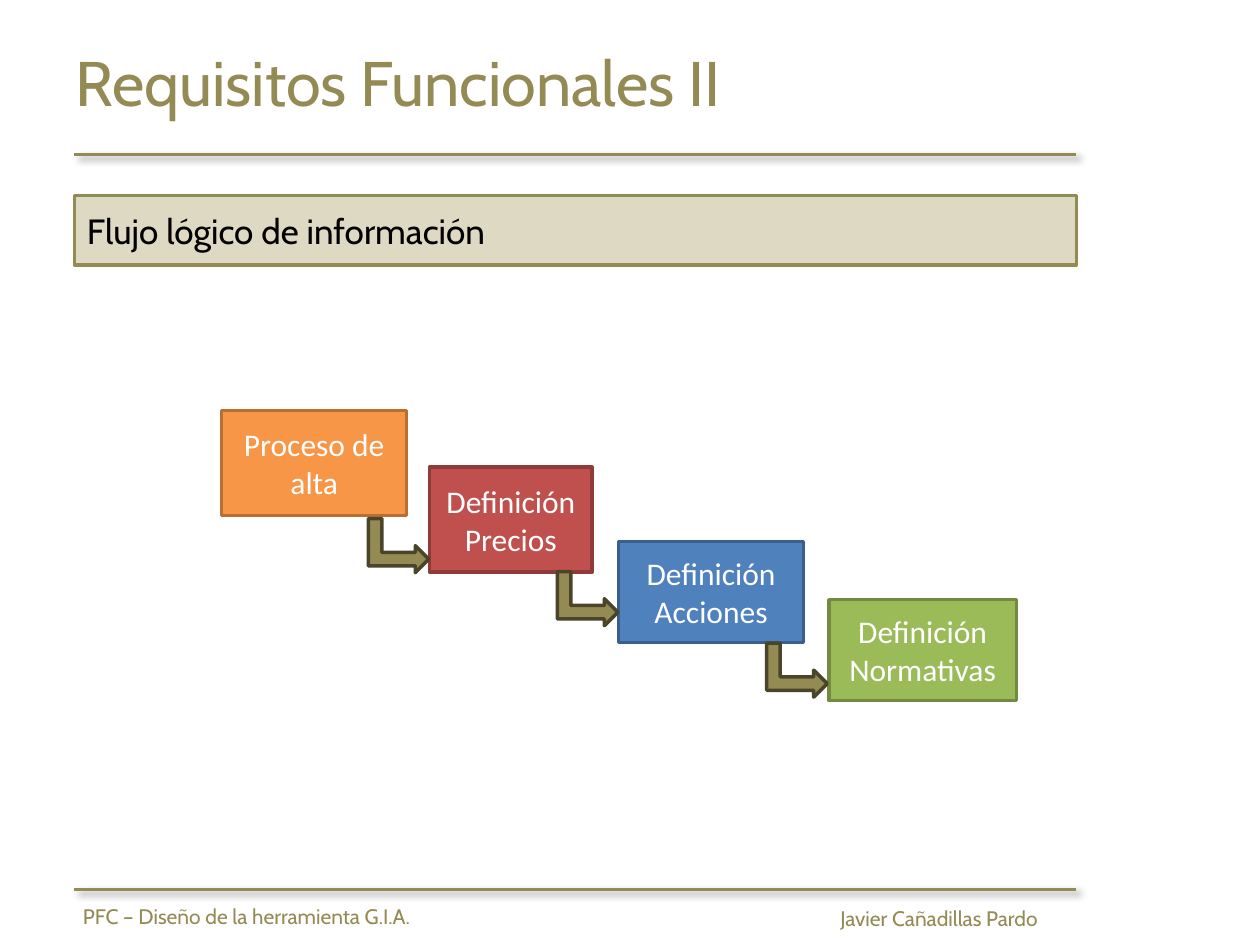
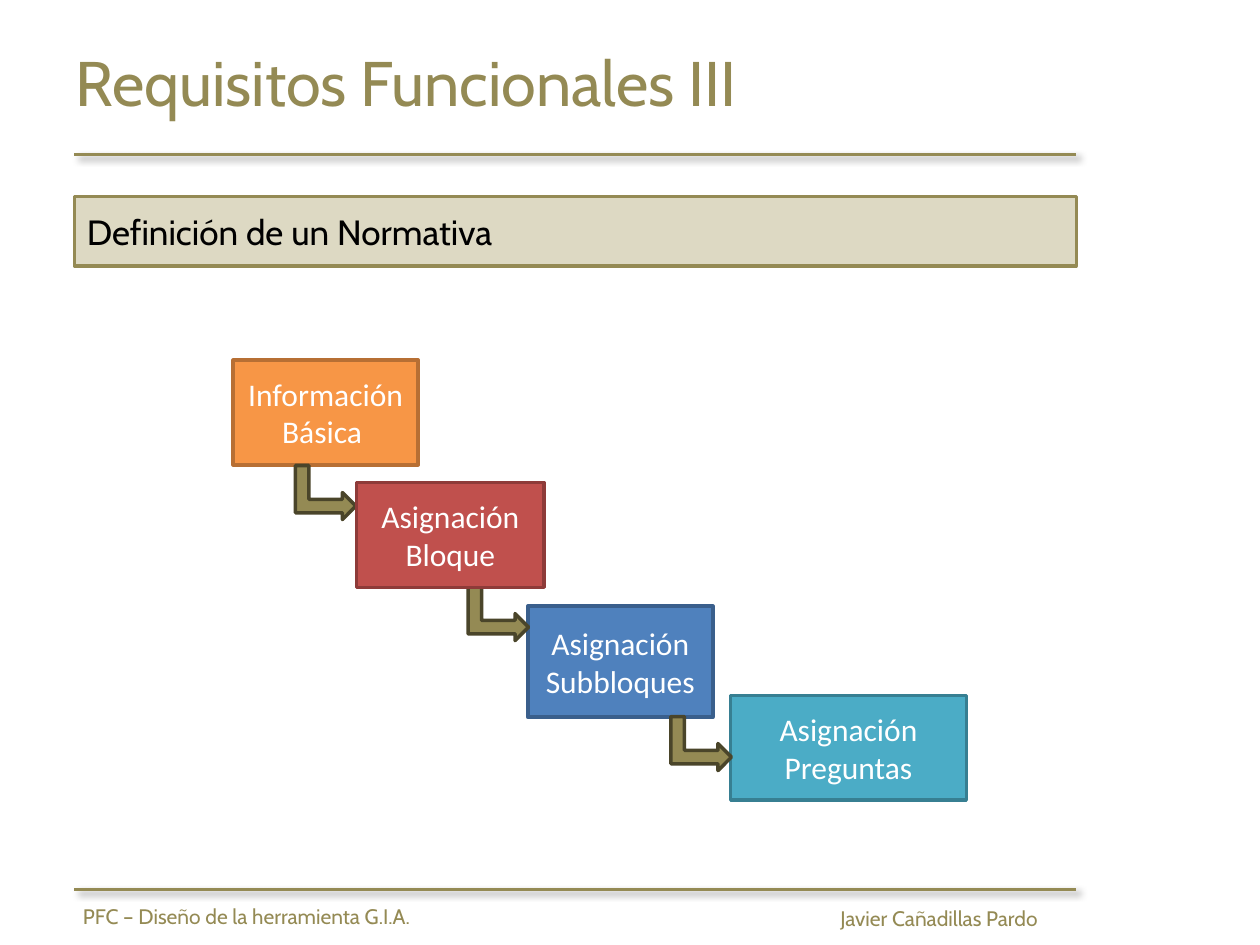
import pptx
import pptx.dml.color
import pptx.enum.shapes
import pptx.enum.text
import pptx.oxml
import pptx.oxml.ns
import pptx.util

Cm = pptx.util.Cm
Pt = pptx.util.Pt
SHAPE = pptx.enum.shapes.MSO_SHAPE
ALIGN = pptx.enum.text.PP_ALIGN
ANCHOR = pptx.enum.text.MSO_ANCHOR

OLIVE = "948A54"
DARK_OLIVE = "4A452A"
SAND = "DDD9C3"
BLACK = "000000"
WHITE = "FFFFFF"
ORANGE = ("F79646", "B76F34")
RED = ("C0504D", "8E3B39")
BLUE = ("4F81BD", "3A5F8C")
GREEN = ("9BBB59", "738A42")
TEAL = ("4BACC6", "377F92")

LEFT, RIGHT = 1.5, 21.7
SHADOW = (
    f'<a:effectLst {pptx.oxml.ns.nsdecls("a")}>'
    '<a:outerShdw blurRad="50800" dist="38100" dir="2700000" algn="tl" rotWithShape="0">'
    '<a:srgbClr val="000000"><a:alpha val="40000"/></a:srgbClr>'
    '</a:outerShdw></a:effectLst>'
)


def rgb(color):
    return pptx.dml.color.RGBColor.from_string(color)


def write(sp, text, size, font, color, align=ALIGN.LEFT, anchor=ANCHOR.TOP):
    tf = sp.text_frame
    tf.word_wrap = True
    tf.vertical_anchor = anchor
    tf.text = text
    for p in tf.paragraphs:
        p.alignment = align
        for r in p.runs:
            r.font.size = Pt(size)
            r.font.name = font
            r.font.color.rgb = rgb(color)


def add_label(s, text, x, y, w, h, size):
    sp = s.shapes.add_textbox(Cm(x), Cm(y), Cm(w), Cm(h))
    write(sp, text, size, "Cabin", OLIVE)


def add_rule(s, y):
    line = s.shapes.add_connector(
        pptx.enum.shapes.MSO_CONNECTOR.STRAIGHT, Cm(LEFT), Cm(y), Cm(RIGHT), Cm(y))
    line.line.color.rgb = rgb(OLIVE)
    line.line.width = Pt(1.75)
    line._element.spPr.append(pptx.oxml.parse_xml(SHADOW))


def add_figure(s, kind, x, y, w, h, fill, outline):
    sp = s.shapes.add_shape(kind, Cm(x), Cm(y), Cm(w), Cm(h))
    sp.shadow.inherit = False
    sp.fill.solid()
    sp.fill.fore_color.rgb = rgb(fill)
    sp.line.color.rgb = rgb(outline)
    sp.line.width = Pt(2)
    return sp


def add_step(s, text, x, y, w, h, colors):
    sp = add_figure(s, SHAPE.FLOWCHART_PROCESS, x, y, w, h, *colors)
    write(sp, text, 18, "Calibri", WHITE, ALIGN.CENTER, ANCHOR.MIDDLE)


def add_arrows(s, positions):
    for x, y in positions:
        sp = add_figure(s, SHAPE.BENT_UP_ARROW, x, y, 1.09, 1.22, OLIVE, DARK_OLIVE)
        sp.rotation = 90


def add_frame(prs, title, heading, heading_top):
    s = prs.slides.add_slide(prs.slide_layouts[6])
    add_label(s, title, 1.27, 0.76, 22.86, 3.18, 36)
    add_rule(s, 3.12)
    banner = add_figure(s, SHAPE.RECTANGLE, LEFT, heading_top, RIGHT - LEFT, 1.4, SAND, OLIVE)
    write(banner, heading, 20, "Cabin", BLACK, anchor=ANCHOR.MIDDLE)
    add_rule(s, 17.93)
    add_label(s, "Javier Cañadillas Pardo", 16.69, 18.14, 4.93, 0.76, 12)
    add_label(s, "PFC – Diseño de la herramienta G.I.A.", 1.42, 18.08, 7.7, 0.76, 12)
    return s


def add_information_flow(prs):
    s = add_frame(prs, "Requisitos Funcionales II", "Flujo lógico de información", 3.94)
    add_step(s, "Proceso de alta", 4.47, 8.28, 3.73, 2.11, ORANGE)
    add_step(s, "Definición Precios", 8.66, 9.42, 3.28, 2.11, RED)
    add_step(s, "Definición Acciones", 12.47, 10.92, 3.73, 2.03, BLUE)
    add_step(s, "Definición Normativas", 16.71, 12.09, 3.78, 2.03, GREEN)
    add_arrows(s, [(7.49, 10.39), (11.3, 11.46), (15.52, 12.9)])


def add_rule_definition(prs):
    s = add_frame(prs, "Requisitos Funcionales III", "Definición de un Normativa", 3.96)
    add_step(s, "Información Básica ", 4.7, 7.26, 3.73, 2.11, ORANGE)
    add_step(s, "Asignación\nSubbloques", 10.64, 12.22, 3.73, 2.24, BLUE)
    add_step(s, "Asignación\nPreguntas", 14.73, 14.02, 4.75, 2.11, TEAL)
    add_arrows(s, [(6.02, 9.32), (9.5, 11.76), (13.59, 14.38)])
    add_step(s, "Asignación Bloque", 7.19, 9.73, 3.78, 2.11, RED)


def main():
    prs = pptx.Presentation()
    prs.slide_width = Cm(25.4)
    prs.slide_height = Cm(19.05)
    add_information_flow(prs)
    add_rule_definition(prs)
    prs.save("out.pptx")


if __name__ == "__main__":
    main()
